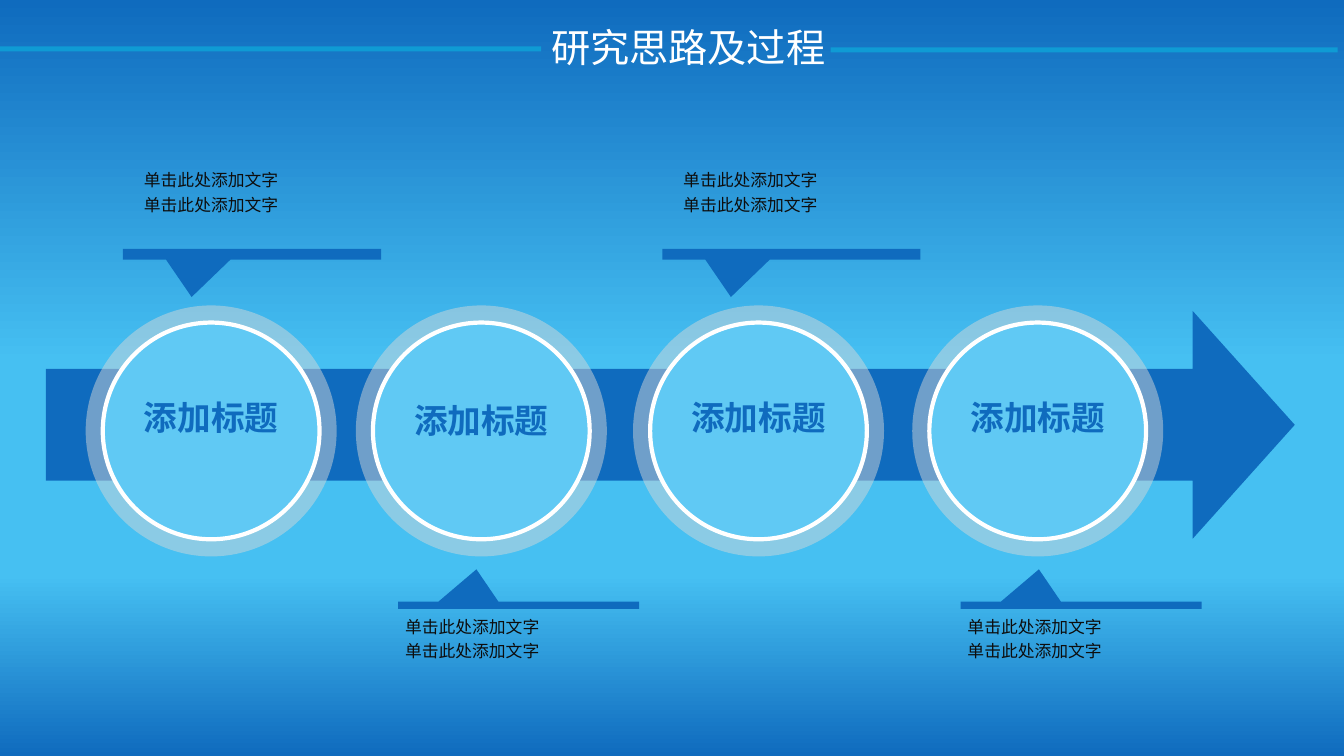
from copy import deepcopy
from dataclasses import dataclass

from lxml import etree
from pptx import Presentation
from pptx.dml.color import RGBColor
from pptx.enum.shapes import MSO_SHAPE
from pptx.enum.text import MSO_AUTO_SIZE, PP_ALIGN
from pptx.oxml.ns import qn
from pptx.shapes.autoshape import Shape
from pptx.shapes.shapetree import GroupShapes, SlideShapes
from pptx.slide import Slide
from pptx.util import Emu, Inches, Pt

ELLIPSE = MSO_SHAPE.OVAL
RECTANGLE = MSO_SHAPE.RECTANGLE
RIGHT_ARROW = MSO_SHAPE.RIGHT_ARROW
CALLOUT = MSO_SHAPE.RECTANGULAR_CALLOUT
CENTER = PP_ALIGN.CENTER
LEFT = PP_ALIGN.LEFT
GROW = MSO_AUTO_SIZE.SHAPE_TO_FIT_TEXT
FIXED = MSO_AUTO_SIZE.NONE

DEEP_BLUE = RGBColor(0x0F, 0x6B, 0xBE)
SKY_BLUE = RGBColor(0x46, 0xC0, 0xF2)
DISC_BLUE = RGBColor(0x60, 0xC9, 0xF4)
RULE_BLUE = RGBColor(0x0F, 0x9B, 0xD4)
HALO_GRAY = RGBColor(0xD8, 0xD8, 0xD8)
INK = RGBColor(0x0D, 0x0D, 0x0D)
WHITE = RGBColor(0xFF, 0xFF, 0xFF)

FONT = "Noto Sans CJK SC"
COLUMNS, ROWS = 160, 90
SLIDE_WIDTH, SLIDE_HEIGHT = Inches(13.33), Inches(7.5)
BACKGROUND_STOPS = ((0, DEEP_BLUE), (0.48, SKY_BLUE), (0.76, SKY_BLUE), (1, DEEP_BLUE))

HALO_TOP, HALO_SIZE, DISC_SIZE = 36.36, 29.88, 25.8
LABEL_WIDTH, LABEL_HEIGHT = 33, 10.56
NOTE_WIDTH, TEXT_HEIGHT = 28.56, 6.84


@dataclass(frozen=True)
class Box:
    left: float
    top: float
    width: float
    height: float

    def lengths(self) -> tuple[Emu, Emu, Emu, Emu]:
        column, row = SLIDE_WIDTH / COLUMNS, SLIDE_HEIGHT / ROWS
        return (Emu(round(self.left * column)), Emu(round(self.top * row)),
                Emu(round(self.width * column)), Emu(round(self.height * row)))


@dataclass(frozen=True)
class TextStyle:
    size: float
    color: RGBColor
    bold: bool = False
    alignment: PP_ALIGN = LEFT
    line_spacing: float = 1.0
    auto_size: MSO_AUTO_SIZE = GROW


@dataclass(frozen=True)
class NoteStyle:
    bar_top: float
    bar_width: float
    bar_height: float
    pointer: tuple[float, float]
    text_shift: float
    text_top: float


@dataclass(frozen=True)
class Step:
    halo_left: float
    label_top: float
    note_left: float
    note: NoteStyle


TITLE_STYLE = TextStyle(28, WHITE)
LABEL_STYLE = TextStyle(24, DEEP_BLUE, bold=True, alignment=CENTER, auto_size=FIXED)
NOTE_TEXT_STYLE = TextStyle(12, INK, line_spacing=1.2)

ABOVE = NoteStyle(29.64, 30.72, 1.26, (-0.234, 4.033), 1.32, 19.2)
BELOW = NoteStyle(71.64, 28.68, 0.84, (-0.175, -5.095), -0.36, 72.36)

STEPS = (
    Step(10.2, 46.68, 14.64, ABOVE),
    Step(42.36, 47.04, 47.4, BELOW),
    Step(75.36, 46.68, 78.84, ABOVE),
    Step(108.6, 46.68, 114.36, BELOW),
)
TITLE_RULES = (Box(0, 5.52, 64.44, 0.6), Box(98.88, 5.64, 60.36, 0.6))


def paint_background(slide: Slide) -> None:
    fill = slide.background.fill
    fill.gradient()
    fill.gradient_angle = 270
    stop_list = slide.element.find(".//" + qn("a:gsLst"))
    while len(stop_list) < len(BACKGROUND_STOPS):
        stop_list.append(deepcopy(stop_list[0]))
    for stop, (position, color) in zip(fill.gradient_stops, BACKGROUND_STOPS):
        stop.position = position
        stop.color.rgb = color


def add_filled(shapes: SlideShapes | GroupShapes, kind: MSO_SHAPE, box: Box, color: RGBColor,
               adjustments: tuple[float, ...] = ()) -> Shape:
    shape = shapes.add_shape(kind, *box.lengths())
    shape.shadow.inherit = False
    shape.fill.solid()
    shape.fill.fore_color.rgb = color
    shape.line.fill.background()
    for index, value in enumerate(adjustments):
        shape.adjustments[index] = value
    return shape


def set_opacity(shape: Shape, percent: int) -> None:
    color = shape.element.spPr.find(qn("a:solidFill"))[0]
    etree.SubElement(color, qn("a:alpha"), val=str(percent * 1000))


def add_text(shapes: SlideShapes | GroupShapes, box: Box, lines: tuple[str, ...],
             style: TextStyle) -> None:
    frame = shapes.add_textbox(*box.lengths()).text_frame
    frame.word_wrap = True
    frame.auto_size = style.auto_size
    for index, line in enumerate(lines):
        paragraph = frame.add_paragraph() if index else frame.paragraphs[0]
        paragraph.alignment = style.alignment
        paragraph.line_spacing = style.line_spacing
        run = paragraph.add_run()
        run.text = line
        run.font.name = FONT
        run.font.size = Pt(style.size)
        run.font.bold = style.bold
        run.font.color.rgb = style.color
        etree.SubElement(run.font._element, qn("a:ea"), typeface=FONT)


def add_circle(shapes: SlideShapes, step: Step) -> None:
    parts = shapes.add_group_shape().shapes
    halo = add_filled(parts, ELLIPSE, Box(step.halo_left, HALO_TOP, HALO_SIZE, HALO_SIZE), HALO_GRAY)
    set_opacity(halo, 48)
    inset = (HALO_SIZE - DISC_SIZE) / 2
    disc_box = Box(step.halo_left + inset, HALO_TOP + inset, DISC_SIZE, DISC_SIZE)
    disc = add_filled(parts, ELLIPSE, disc_box, DISC_BLUE)
    disc.line.color.rgb = WHITE
    disc.line.width = Pt(3)
    label_left = step.halo_left + (HALO_SIZE - LABEL_WIDTH) / 2
    add_text(parts, Box(label_left, step.label_top, LABEL_WIDTH, LABEL_HEIGHT),
             ("添加标题",), LABEL_STYLE)


def add_note(shapes: SlideShapes, step: Step) -> None:
    note = step.note
    add_filled(shapes, CALLOUT, Box(step.note_left, note.bar_top, note.bar_width, note.bar_height),
               DEEP_BLUE, note.pointer)
    text_box = Box(step.note_left + note.text_shift, note.text_top, NOTE_WIDTH, TEXT_HEIGHT)
    add_text(shapes, text_box, ("单击此处添加文字",) * 2, NOTE_TEXT_STYLE)


def main() -> None:
    presentation = Presentation()
    presentation.slide_width, presentation.slide_height = SLIDE_WIDTH, SLIDE_HEIGHT
    slide = presentation.slides.add_slide(presentation.slide_layouts[6])
    paint_background(slide)
    shapes = slide.shapes
    add_filled(shapes, RIGHT_ARROW, Box(5.46, 37.02, 148.68, 27.12), DEEP_BLUE, (0.491, 0.448))
    for step in STEPS:
        add_circle(shapes, step)
    for step in STEPS:
        add_note(shapes, step)
    for rule in TITLE_RULES:
        add_filled(shapes, RECTANGLE, rule, RULE_BLUE)
    add_text(shapes, Box(64.44, 2.16, 46.08, TEXT_HEIGHT), ("研究思路及过程",), TITLE_STYLE)
    presentation.save("out.pptx")


if __name__ == "__main__":
    main()
